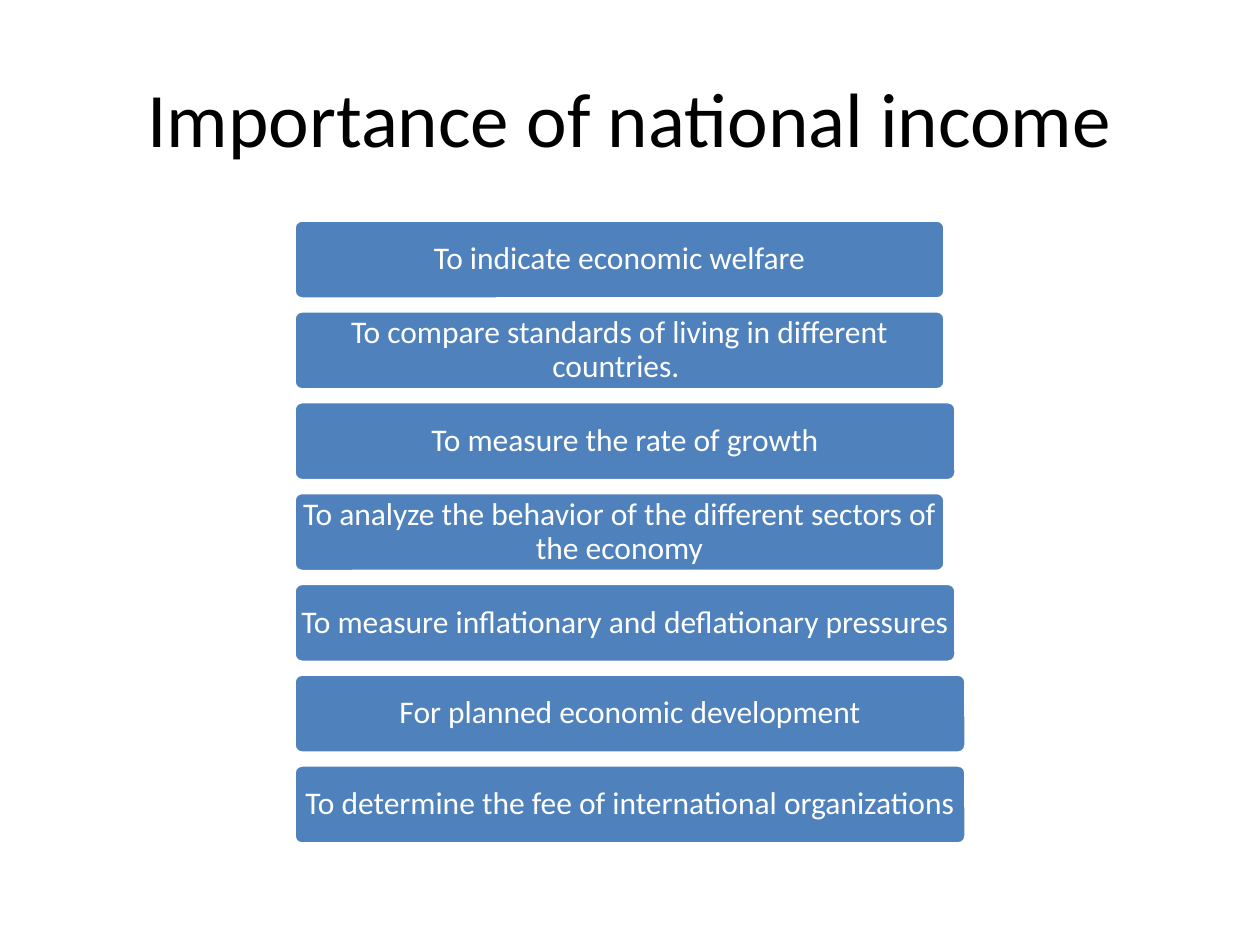
from pptx import Presentation
from pptx.dml.color import RGBColor
from pptx.enum.shapes import MSO_SHAPE
from pptx.enum.text import MSO_ANCHOR, PP_ALIGN
from pptx.util import Pt

PX = 914400 / 126
FONT = "Calibri"
COLORS = {"title": "000000", "bar": "4F81BD", "light": "FFFFFF"}
REASONS = [
    ("To indicate economic welfare", 651),
    ("To compare standards of living in different countries. ", 651),
    ("To measure the rate of growth", 662),
    ("To analyze the behavior of the different sectors of the economy", 651),
    ("To measure inflationary and deflationary pressures", 662),
    ("For planned economic development", 672),
    ("To determine the fee of international organizations", 672),
]


def px(length):
    return round(length * PX)


def color(name):
    return RGBColor.from_string(COLORS[name])


def write(frame, text, size, color_name):
    frame.text = text
    frame.word_wrap = True
    frame.vertical_anchor = MSO_ANCHOR.MIDDLE
    paragraph = frame.paragraphs[0]
    paragraph.alignment = PP_ALIGN.CENTER
    font = paragraph.runs[0].font
    font.name = FONT
    font.size = Pt(size)
    font.color.rgb = color(color_name)
    return paragraph


def place_title(slide, left, top, width, height):
    heading = slide.shapes.title
    heading.left, heading.top = px(left), px(top)
    heading.width, heading.height = px(width), px(height)
    write(heading.text_frame, "Importance of national income", 44, "title")


def place_reasons(slide, left, top, height, bar_height):
    reasons = slide.shapes.add_group_shape()
    pitch = (height - bar_height) / (len(REASONS) - 1)
    for row, (reason, width) in enumerate(REASONS):
        bar = reasons.shapes.add_shape(
            MSO_SHAPE.ROUNDED_RECTANGLE,
            px(left), px(top + row * pitch), px(width), px(bar_height))
        bar.adjustments[0] = 0.1
        bar.shadow.inherit = False
        bar.fill.solid()
        bar.fill.fore_color.rgb = color("bar")
        bar.line.color.rgb = color("light")
        bar.line.width = Pt(2)
        frame = bar.text_frame
        frame.margin_left = frame.margin_right = px(1)
        frame.margin_top = frame.margin_bottom = px(1)
        write(frame, reason, 18, "light").line_spacing = 0.9


def main():
    deck = Presentation()
    deck.slide_width, deck.slide_height = px(1260), px(945)
    slide = deck.slides.add_slide(deck.slide_layouts[5])
    place_title(slide, 63, 38, 1134, 158)
    place_reasons(slide, 294, 220, 624, 79)
    deck.save("out.pptx")


if __name__ == "__main__":
    main()
